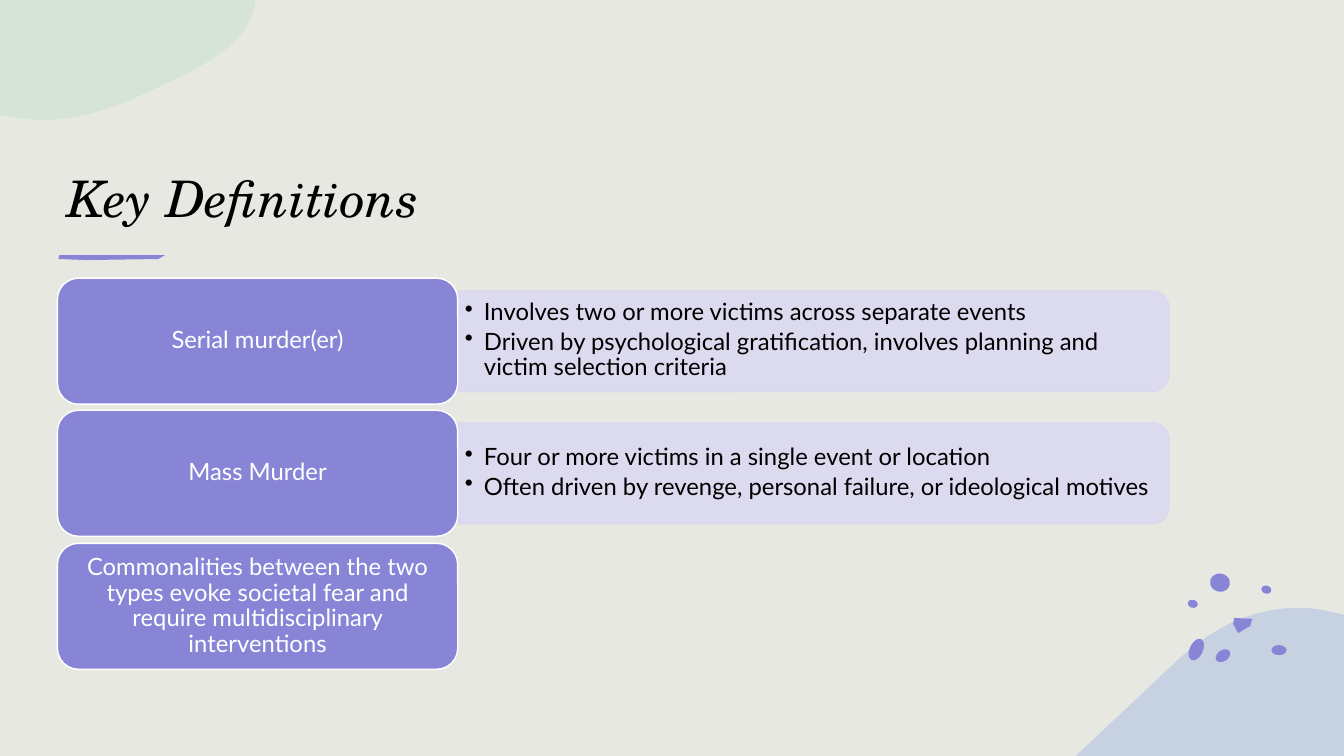
"""Build the Key Definitions slide."""
from dataclasses import dataclass
from typing import NamedTuple

from lxml.etree import SubElement
from pptx import Presentation
from pptx.dml.color import RGBColor
from pptx.dml.fill import FillFormat
from pptx.enum.shapes import MSO_SHAPE as Preset
from pptx.enum.text import MSO_ANCHOR as Anchor, PP_ALIGN as Align
from pptx.oxml.ns import qn
from pptx.shapes.autoshape import Shape
from pptx.slide import Slide
from pptx.text.text import TextFrame, _Paragraph as Paragraph
from pptx.util import Emu, Pt

PX = 9144
CURVE_STEPS = 12


@dataclass(frozen=True)
class Theme:
    """Colours, fonts and type sizes of the slide."""
    background: RGBColor = RGBColor.from_string("E8E8E2")
    violet: RGBColor = RGBColor.from_string("8885D7")
    lilac: RGBColor = RGBColor.from_string("DAD9F0")
    blue: RGBColor = RGBColor.from_string("A6BCE2")
    green: RGBColor = RGBColor.from_string("C3E1CE")
    black: RGBColor = RGBColor.from_string("000000")
    white: RGBColor = RGBColor.from_string("FFFFFF")
    title_font: str = "TeX Gyre Schola"
    body_font: str = "Lato"
    title_size: int = 36
    body_size: int = 17


THEME = Theme()


class Box(NamedTuple):
    """Left, top, width and height in px."""
    left: int
    top: int
    width: int
    height: int

    def emu(self) -> list[Emu]:
        """Return the four lengths in EMU."""
        return [Emu(value * PX) for value in self]


class Outline(NamedTuple):
    """Closed outline: each segment is a line (x, y) or a cubic curve (six numbers)."""
    start: tuple[int, int]
    segments: tuple[tuple[int, ...], ...]
    color: RGBColor = THEME.violet
    opacity: int = 100


class Pebble(NamedTuple):
    """Oval pebble, turned by a tilt in degrees."""
    box: Box
    tilt: int = 0


class Definition(NamedTuple):
    """A term and the points that explain it."""
    term: str
    points: tuple[str, ...] = ()


OUTLINES = (
    Outline((1067, 750), (
        (1169, 654), (1206, 620, 1245, 603, 1288, 603), (1303, 603, 1318, 606, 1333, 610),
        (1333, 750)), THEME.blue, 50),
    Outline((0, 0), (
        (253, 0), (253, 6), (245, 44, 200, 67, 158, 86), (123, 103, 86, 119, 41, 119),
        (27, 119, 13, 117, 0, 114)), THEME.green, 50),
    Outline((59, 253), ((164, 253), (157, 257), (86, 258), (58, 257))),
    Outline((1224, 613), ((1242, 614), (1240, 621), (1228, 628), (1223, 619))),
)

PEBBLES = (
    Pebble(Box(1205, 645, 16, 11), -35),
    Pebble(Box(1180, 633, 13, 23), 25),
    Pebble(Box(1261, 640, 15, 10)),
    Pebble(Box(1200, 569, 20, 18), 15),
    Pebble(Box(1251, 581, 10, 8), 15),
    Pebble(Box(1178, 595, 10, 8), 15),
)

DEFINITIONS = (
    Definition("Serial murder(er)", (
        "Involves two or more victims across separate events",
        "Driven by psychological gratification, involves planning and victim selection criteria")),
    Definition("Mass Murder", (
        "Four or more victims in a single event or location",
        "Often driven by revenge, personal failure, or ideological motives")),
    Definition("Commonalities between the two types evoke societal fear and "
               "require multidisciplinary interventions"),
)


def paint(fill: FillFormat, color: RGBColor, opacity: int = 100) -> None:
    """Fill with a solid colour of the given opacity in percent."""
    fill.solid()
    fill.fore_color.rgb = color
    if opacity < 100:
        for node in fill._xPr.iter(qn("a:solidFill")):
            if node.getparent() is fill._xPr:
                SubElement(node[0], qn("a:alpha"), val=str(opacity * 1000))


def flatten(outline: Outline) -> list[tuple[float, float]]:
    """Return the outline's vertices in EMU, with curves split into short lines."""
    vertices: list[tuple[float, float]] = [outline.start]
    for segment in outline.segments:
        if len(segment) == 2:
            vertices.append((segment[0], segment[1]))
            continue
        controls = [vertices[-1], segment[:2], segment[2:4], segment[4:]]
        for step in range(1, CURVE_STEPS + 1):
            t = step / CURVE_STEPS
            weights = ((1 - t) ** 3, 3 * t * (1 - t) ** 2, 3 * t * t * (1 - t), t ** 3)
            x, y = (sum(w * point[axis] for w, point in zip(weights, controls)) for axis in (0, 1))
            vertices.append((x, y))
    return [(x * PX, y * PX) for x, y in vertices]


def draw_outline(slide: Slide, outline: Outline) -> None:
    """Draw a filled outline without a border."""
    start, *others = flatten(outline)
    builder = slide.shapes.build_freeform(*start)
    builder.add_line_segments(others, close=True)
    shape = builder.convert_to_shape()
    shape.shadow.inherit = False
    paint(shape.fill, outline.color, outline.opacity)
    shape.line.fill.background()


def draw_preset(slide: Slide, preset: Preset, box: Box, fill: RGBColor,
                line: RGBColor | None = None, opacity: int = 100, rotation: int = 0) -> Shape:
    """Draw a preset shape, with a thin border if a line colour is given."""
    shape = slide.shapes.add_shape(preset, *box.emu())
    shape.shadow.inherit = False
    shape.rotation = rotation
    paint(shape.fill, fill, opacity)
    if line is None:
        shape.line.fill.background()
    else:
        paint(shape.line.fill, line, opacity)
        shape.line.width = Pt(1)
    return shape


def style_body(text_frame: TextFrame, color: RGBColor, align: Align) -> None:
    """Format the text of a term or its points."""
    text_frame.word_wrap = True
    text_frame.vertical_anchor = Anchor.MIDDLE
    text_frame.margin_left = text_frame.margin_right = Emu(7 * PX)
    text_frame.margin_top = text_frame.margin_bottom = Emu(4 * PX)
    for paragraph in text_frame.paragraphs:
        paragraph.alignment = align
        paragraph.line_spacing = 0.9
        paragraph.space_after = Pt(2.5)
        font = paragraph.runs[0].font
        font.name, font.size, font.color.rgb = THEME.body_font, Pt(THEME.body_size), color


def add_bullet(paragraph: Paragraph) -> None:
    """Give a paragraph a hanging bullet."""
    properties = paragraph._p.get_or_add_pPr()
    properties.set("marL", str(19 * PX))
    properties.set("indent", str(-19 * PX))
    SubElement(properties, qn("a:buChar"), char="•")


def draw_definition(slide: Slide, definition: Definition, top: int) -> None:
    """Draw one row: the term's box and, if there are points, the bar beside it."""
    if definition.points:
        length, depth = 705, 100
        turn = (length - depth) // 2
        draw_preset(slide, Preset.ROUND_2_SAME_RECTANGLE,
                    Box(455 + turn, top + 12 - turn, depth, length),
                    THEME.lilac, THEME.lilac, opacity=90, rotation=90)
        text_frame = slide.shapes.add_textbox(*Box(454, top + 17, 700, 90).emu()).text_frame
        text_frame.text = "\n".join(definition.points)
        style_body(text_frame, THEME.black, Align.LEFT)
        for paragraph in text_frame.paragraphs:
            add_bullet(paragraph)
    term = draw_preset(slide, Preset.ROUNDED_RECTANGLE, Box(57, top, 397, 125),
                       THEME.violet, THEME.white)
    term.text_frame.text = definition.term
    style_body(term.text_frame, THEME.white, Align.CENTER)


def draw_title(slide: Slide, text: str) -> None:
    """Write the slide's title."""
    text_frame = slide.shapes.add_textbox(*Box(57, 86, 1102, 145).emu()).text_frame
    text_frame.word_wrap = True
    text_frame.vertical_anchor = Anchor.BOTTOM
    text_frame.text = text
    font = text_frame.paragraphs[0].runs[0].font
    font.name, font.size, font.italic = THEME.title_font, Pt(THEME.title_size), True
    font.color.rgb = THEME.black


def main() -> None:
    """Build and save the presentation."""
    presentation = Presentation()
    presentation.slide_width, presentation.slide_height = Emu(1333 * PX), Emu(750 * PX)
    slide = presentation.slides.add_slide(presentation.slide_layouts[6])
    paint(slide.background.fill, THEME.background)
    for outline in OUTLINES:
        draw_outline(slide, outline)
    for pebble in PEBBLES:
        draw_preset(slide, Preset.OVAL, pebble.box, THEME.violet, rotation=pebble.tilt)
    draw_title(slide, "Key Definitions")
    for row, definition in enumerate(DEFINITIONS):
        draw_definition(slide, definition, 276 + row * 263 // 2)
    presentation.save("out.pptx")


if __name__ == "__main__":
    main()
